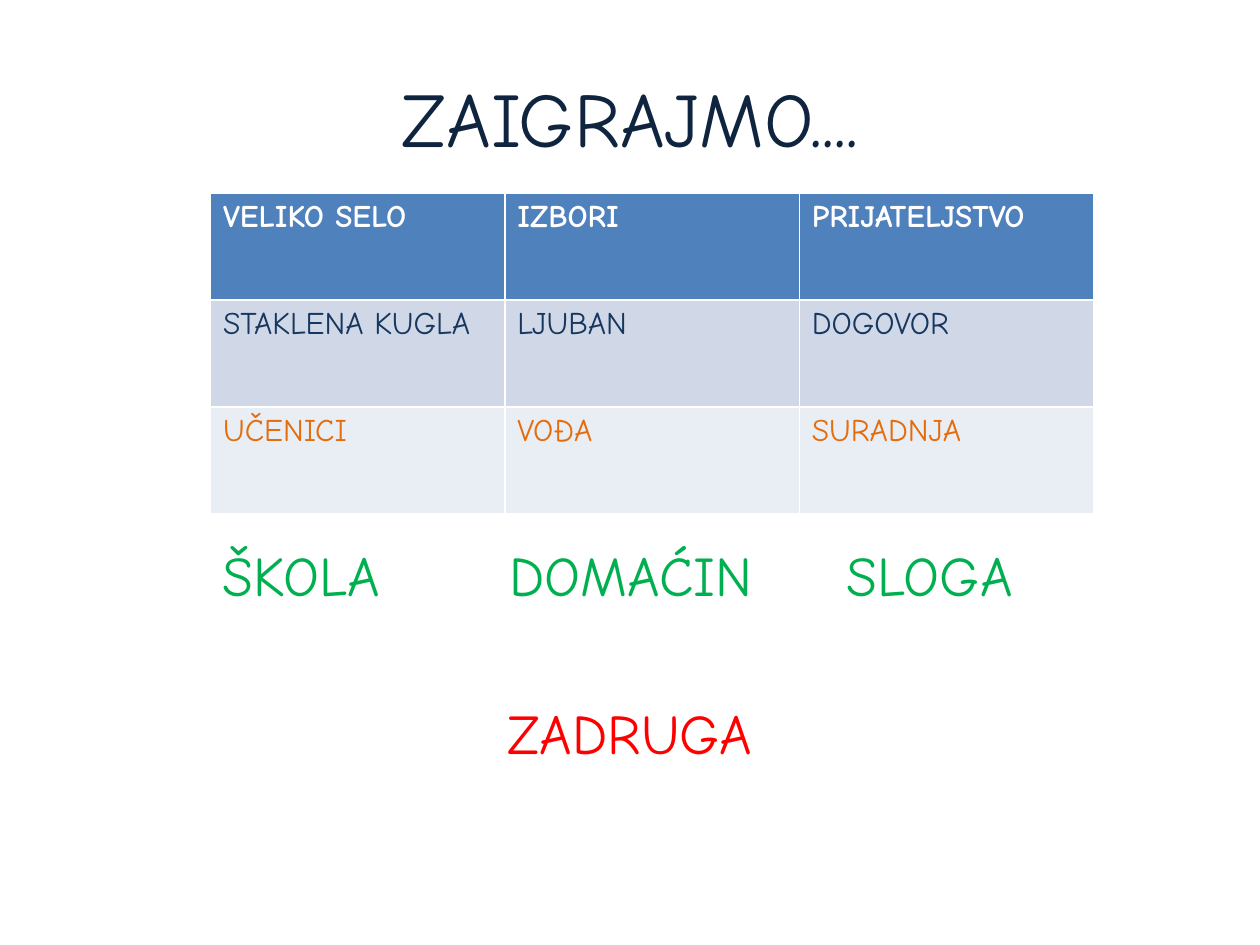
from pptx import Presentation
from pptx.dml.color import RGBColor
from pptx.enum.text import MSO_ANCHOR, PP_ALIGN
from pptx.util import Inches, Pt

FONT = "Comic Neue"
NAVY = RGBColor(0x0F, 0x24, 0x3E)
WHITE = RGBColor(0xFF, 0xFF, 0xFF)
DARK_BLUE = RGBColor(0x17, 0x37, 0x5E)
ORANGE = RGBColor(0xE4, 0x6C, 0x0A)
GREEN = RGBColor(0x00, 0xB0, 0x50)
RED = RGBColor(0xFF, 0x00, 0x00)
HEADER_BLUE = RGBColor(0x4F, 0x81, 0xBD)
PALE_BLUE = RGBColor(0xD0, 0xD8, 0xE8)
PALER_BLUE = RGBColor(0xE9, 0xED, 0xF4)

TITLE = "ZAIGRAJMO...."
CLUES = [
    (("VELIKO SELO", "IZBORI", "PRIJATELJSTVO"), WHITE, HEADER_BLUE, True),
    (("STAKLENA KUGLA", "LJUBAN", "DOGOVOR"), DARK_BLUE, PALE_BLUE, False),
    (("UČENICI", "VOĐA", "SURADNJA"), ORANGE, PALER_BLUE, False),
]
COLUMN_ANSWERS = [("ŠKOLA", 1.77), ("DOMAĆIN", 4.04), ("SLOGA", 6.72)]
FINAL_ANSWER = "ZADRUGA"

SLIDE_W, SLIDE_H = 10, 7.5
MARGIN = 0.5
ANSWER_W, ANSWER_H = 2.3, 0.6
TABLE_LEFT, TABLE_TOP, TABLE_W, ROW_H = 1.67, 1.53, 7.01, 0.85


def style(paragraph, size, color, bold=False):
    formats = {"name": FONT, "size": Pt(size), "bold": bold}
    for run in paragraph.runs:
        for key, value in formats.items():
            setattr(run.font, key, value)
        run.font.color.rgb = color


def add_text(slide, text, box, size, color, align=PP_ALIGN.LEFT):
    frame = slide.shapes.add_textbox(*map(Inches, box)).text_frame
    formats = {"word_wrap": True, "vertical_anchor": MSO_ANCHOR.MIDDLE,
               "margin_left": 0, "margin_right": 0,
               "margin_top": 0, "margin_bottom": 0}
    for key, value in formats.items():
        setattr(frame, key, value)
    paragraph = frame.paragraphs[0]
    paragraph.text = text
    paragraph.alignment = align
    style(paragraph, size, color)


def add_clues(slide):
    rows, columns = len(CLUES), len(CLUES[0][0])
    box = (TABLE_LEFT, TABLE_TOP, TABLE_W, ROW_H * rows)
    table = slide.shapes.add_table(rows, columns, *map(Inches, box)).table
    for row, (words, color, fill, bold) in enumerate(CLUES):
        for column, word in enumerate(words):
            cell = table.cell(row, column)
            cell.text = word
            cell.fill.solid()
            cell.fill.fore_color.rgb = fill
            style(cell.text_frame.paragraphs[0], 18, color, bold)


def main():
    deck = Presentation()
    deck.slide_width, deck.slide_height = Inches(SLIDE_W), Inches(SLIDE_H)
    slide = deck.slides.add_slide(deck.slide_layouts[6])
    full_width = SLIDE_W - 2 * MARGIN
    add_text(slide, TITLE, (MARGIN, 0.3, full_width, 1.25), 44, NAVY, PP_ALIGN.CENTER)
    add_clues(slide)
    for answer, left in COLUMN_ANSWERS:
        add_text(slide, answer, (left, 4.26, ANSWER_W, ANSWER_H), 32, GREEN)
    add_text(slide, FINAL_ANSWER, (MARGIN, 5.51, full_width, ANSWER_H), 32, RED,
             PP_ALIGN.CENTER)
    deck.save("out.pptx")


if __name__ == "__main__":
    main()
